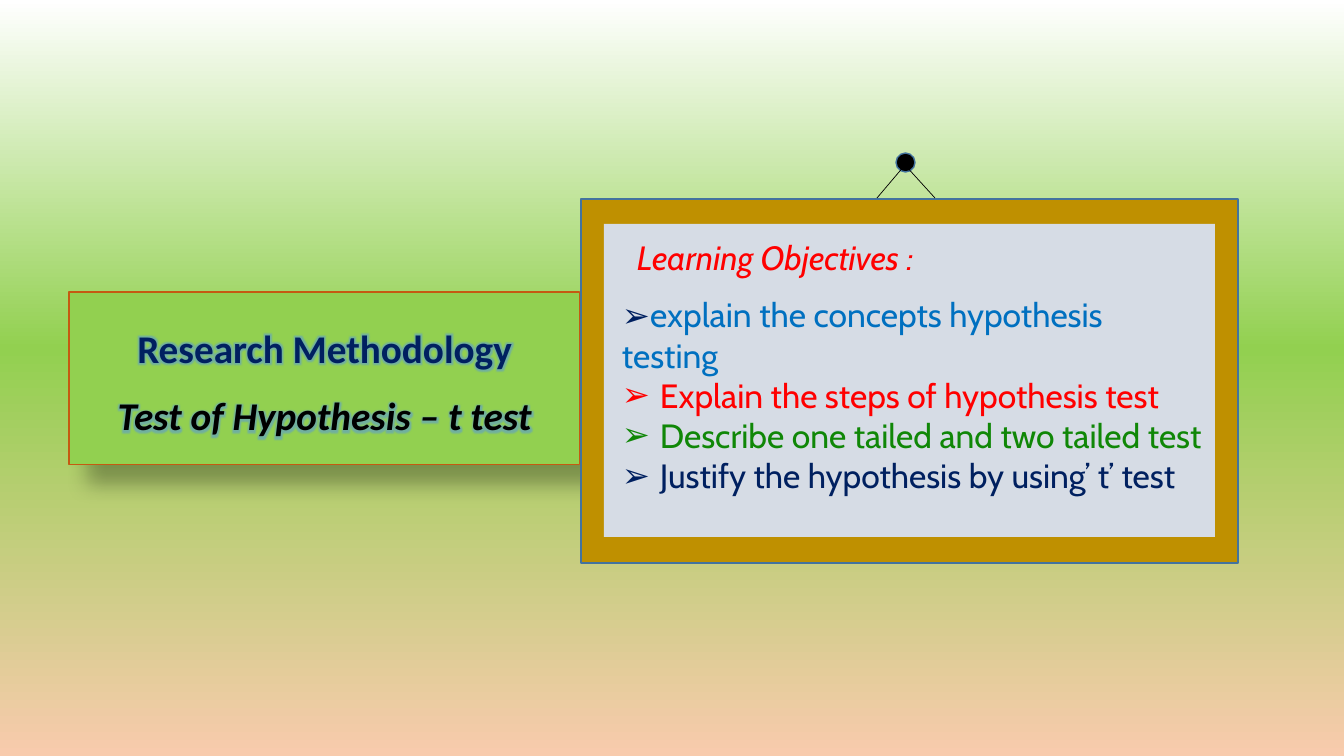
from pptx import Presentation
from pptx.dml.color import RGBColor
from pptx.enum.shapes import MSO_CONNECTOR, MSO_SHAPE
from pptx.enum.text import MSO_ANCHOR, MSO_AUTO_SIZE, PP_ALIGN
from pptx.oxml import parse_xml
from pptx.util import Pt

RECT, OVAL = MSO_SHAPE.RECTANGLE, MSO_SHAPE.OVAL
STRAIGHT = MSO_CONNECTOR.STRAIGHT
MIDDLE, TOP = MSO_ANCHOR.MIDDLE, MSO_ANCHOR.TOP
NO_FIT = MSO_AUTO_SIZE.NONE
CENTER, LEFT, JUSTIFY = PP_ALIGN.CENTER, PP_ALIGN.LEFT, PP_ALIGN.JUSTIFY

PX = 914400 / 100.8
NS = 'xmlns:a="http://schemas.openxmlformats.org/drawingml/2006/main"'
THEME = {
    "backdrop": [(0, "FFFFFF"), (46, "92D050"), (100, "F8CBAD")],
    "arrow": "92D050", "arrow_line": "C55A11", "glow": "5B9BD5",
    "frame": "BF9000", "edge": "43739E", "panel": "D6DCE5",
    "black": "000000", "navy": "002060", "red": "FF0000",
    "blue": "0070C0", "green": "108707",
    "title_font": "Calibri", "body_font": "Cabin", "mark_font": "Arial",
    "title_size": 28, "body_size": 24,
}


def px(*values):
    return [round(v * PX) for v in values]


def add_run(p, text, color, **fmt):
    r = p.add_run()
    r.text = text
    for name, value in fmt.items():
        setattr(r.font, name, value)
    r.font.color.rgb = RGBColor.from_string(THEME[color])
    return r


prs = Presentation()
prs.slide_width, prs.slide_height = px(1344, 756)
s = prs.slides.add_slide(prs.slide_layouts[5])

# Background gradient, top to bottom
fill = s.background.fill
fill.gradient()
fill.gradient_angle = 270
stops = s.element.xpath(".//a:gsLst")[0]
for stop in list(stops):
    stops.remove(stop)
for pos, color in THEME["backdrop"]:
    stops.append(parse_xml(
        f'<a:gs {NS} pos="{pos * 1000}"><a:srgbClr val="{color}"/></a:gs>'))

# Title in an arrow with a soft shadow
title = s.shapes.title
title.left, title.top, title.width, title.height = px(69, 292, 511, 173)
sp_pr = title.element.spPr
sp_pr.append(parse_xml(f'<a:prstGeom {NS} prst="homePlate"><a:avLst/></a:prstGeom>'))
title.fill.solid()
title.fill.fore_color.rgb = RGBColor.from_string(THEME["arrow"])
title.line.color.rgb = RGBColor.from_string(THEME["arrow_line"])
title.line.width = Pt(0.75)
sp_pr.append(parse_xml(
    f'<a:effectLst {NS}><a:outerShdw blurRad="{Pt(15)}" dist="{Pt(18)}" dir="2700000" '
    'algn="tl" rotWithShape="0"><a:srgbClr val="000000"><a:alpha val="30000"/>'
    '</a:srgbClr></a:outerShdw></a:effectLst>'))
tf = title.text_frame
tf.word_wrap, tf.auto_size, tf.vertical_anchor = True, NO_FIT, MIDDLE
tf.margin_left, tf.margin_top, tf.margin_right, tf.margin_bottom = px(10, 11, 10, 5)
title_lines = [
    ("Research Methodology", "navy", False, 0),
    ("Test of Hypothesis – t test", "black", True, 14.5),
]
for i, (text, color, italic, before) in enumerate(title_lines):
    p = tf.add_paragraph() if i else tf.paragraphs[0]
    p.alignment, p.space_before = CENTER, Pt(before)
    r = add_run(p, text, color, name=THEME["title_font"], bold=True,
                italic=italic, size=Pt(THEME["title_size"]))
    r.font.fill  # colour comes before the glow in the run properties
    r.font._element.find("{*}solidFill").addnext(parse_xml(
        f'<a:effectLst {NS}><a:glow rad="{Pt(5)}"><a:srgbClr val="{THEME["glow"]}">'
        '<a:alpha val="60000"/></a:srgbClr></a:glow></a:effectLst>'))

# Hanging board: frame, panel and nail
board = [
    (RECT, (581, 199, 657, 364), "frame", "edge"),
    (RECT, (604, 224, 611, 313), "panel", None),
    (OVAL, (896, 153, 19, 19), "black", "edge"),
]
for kind, box, color, edge in board:
    sp = s.shapes.add_shape(kind, *px(*box))
    sp.shadow.inherit = False
    sp.fill.solid()
    sp.fill.fore_color.rgb = RGBColor.from_string(THEME[color])
    if edge:
        sp.line.color.rgb = RGBColor.from_string(THEME[edge])
        sp.line.width = Pt(1)
    else:
        sp.line.fill.background()

# Strings from the nail to the frame
for x in (877, 935):
    string = s.shapes.add_connector(STRAIGHT, *px(905, 165, x, 198))
    string.line.color.rgb = RGBColor.from_string(THEME["black"])
    string.line.width = Pt(0.5)
    string.element.spPr.append(parse_xml(f"<a:effectLst {NS}/>"))

# Learning objectives
tf = s.shapes.add_textbox(*px(612, 232, 604, 231)).text_frame
tf.word_wrap, tf.auto_size, tf.vertical_anchor = True, NO_FIT, TOP
tf.margin_left, tf.margin_top, tf.margin_right, tf.margin_bottom = px(10, 5, 10, 5)
body = {"name": THEME["body_font"], "size": Pt(THEME["body_size"])}
p = tf.paragraphs[0]
p.alignment = LEFT
p._p.get_or_add_pPr().set("marL", str(px(15)[0]))
add_run(p, "Learning Objectives :", "red", italic=True, **body)

p = tf.add_paragraph()
p.alignment, p.space_before = LEFT, Pt(12)
add_run(p, "➢", "navy", **{**body, "name": THEME["mark_font"]})
add_run(p, "explain the concepts hypothesis testing", "blue", **body)

objectives = [
    ("Explain the steps of hypothesis test", "red"),
    ("Describe one tailed and two tailed test", "green"),
    ("Justify the hypothesis by using’ t’ test", "navy"),
]
indent = px(38)[0]
for text, color in objectives:
    p = tf.add_paragraph()
    p.alignment = JUSTIFY
    p_pr = p._p.get_or_add_pPr()
    p_pr.set("marL", str(indent))
    p_pr.set("indent", str(-indent))
    p_pr.append(parse_xml(f'<a:buFont {NS} typeface="{THEME["mark_font"]}"/>'))
    p_pr.append(parse_xml(f'<a:buChar {NS} char="➢"/>'))
    add_run(p, text, color, **body)

prs.save("out.pptx")
